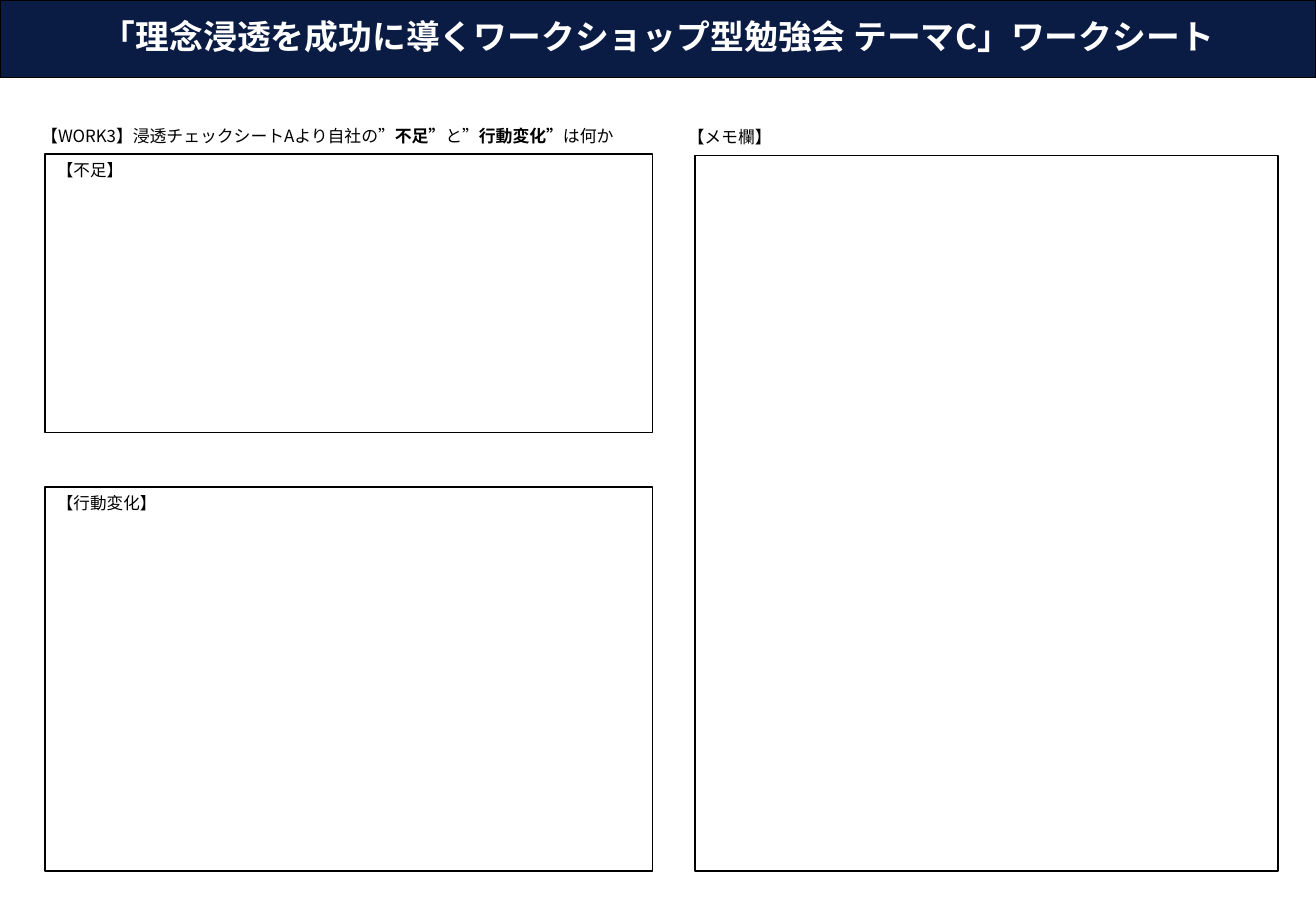
from lxml import etree
from pptx import Presentation
from pptx import util as u
from pptx.dml.color import RGBColor
from pptx.enum import shapes, text
from pptx.oxml import ns

PX = 9144  # 100 px to the inch
FONT = "Noto Sans CJK JP"
NAVY, BLACK, WHITE = "0B1C44", "000000", "FFFFFF"
HEADING = {"line_spacing": 0.9, "space_before": u.Pt(10)}
TITLE = {"line_spacing": 0.9, "alignment": text.PP_ALIGN.CENTER}
NOTE = {"alignment": text.PP_ALIGN.LEFT}


def px(*lengths):
    return [length * PX for length in lengths]


def color(hex_value):
    return RGBColor.from_string(hex_value)


def apply(target, values):
    for name, value in values.items():
        setattr(target, name, value)


def write(box, spans, size, para_format, ink=BLACK, anchor=text.MSO_ANCHOR.TOP):
    """Fill a box with one paragraph made of (words, bold) spans."""
    apply(box.text_frame, {"word_wrap": True, "vertical_anchor": anchor})
    para = box.text_frame.paragraphs[0]
    apply(para, para_format)
    for words, bold in spans:
        span = para.add_run()
        span.text = words
        apply(span.font, {"size": u.Pt(size), "bold": bold, "name": FONT})
        span.font.color.rgb = color(ink)
        east_asian = etree.SubElement(span.font._element, ns.qn("a:ea"))
        east_asian.set("typeface", FONT)


def add_frame(page, area, fill=WHITE):
    frame = page.shapes.add_shape(shapes.MSO_SHAPE.RECTANGLE, *px(*area))
    frame.shadow.inherit = False
    frame.fill.solid()
    frame.fill.fore_color.rgb = color(fill)
    frame.line.color.rgb = color(BLACK)
    frame.line.width = u.Pt(1)
    return frame


def add_heading(page, area, spans, inset=(10, 5)):
    box = page.shapes.add_textbox(*px(*area))
    side, edge = px(*inset)
    apply(box.text_frame, {"margin_left": side, "margin_right": side,
                           "margin_top": edge, "margin_bottom": edge})
    write(box, spans, 10, HEADING)


def main():
    deck = Presentation()
    deck.slide_width, deck.slide_height = px(1083, 750)
    page = deck.slides.add_slide(deck.slide_layouts[6])

    banner = add_frame(page, (0, 0, 1083, 64), NAVY)
    title = "「理念浸透を成功に導くワークショップ型勉強会 テーマC」ワークシート"
    write(banner, [(title, True)], 20, TITLE, WHITE, text.MSO_ANCHOR.MIDDLE)

    add_heading(page, (26, 101, 530, 26), [
        ("【WORK3】浸透チェックシートAより自社の”", False),
        ("不足”", True),
        ("と”", False),
        ("行動変化”", True),
        ("は何か", False),
    ], inset=(8, 4))
    for label, top, height in (("【不足】", 127, 229), ("【行動変化】", 401, 316)):
        frame = add_frame(page, (37, top, 500, height))
        write(frame, [(label, False)], 9.8, NOTE)

    add_frame(page, (572, 128, 480, 589))
    add_heading(page, (556, 101, 185, 53), [("【メモ欄】", False)])
    deck.save("out.pptx")


if __name__ == "__main__":
    main()
